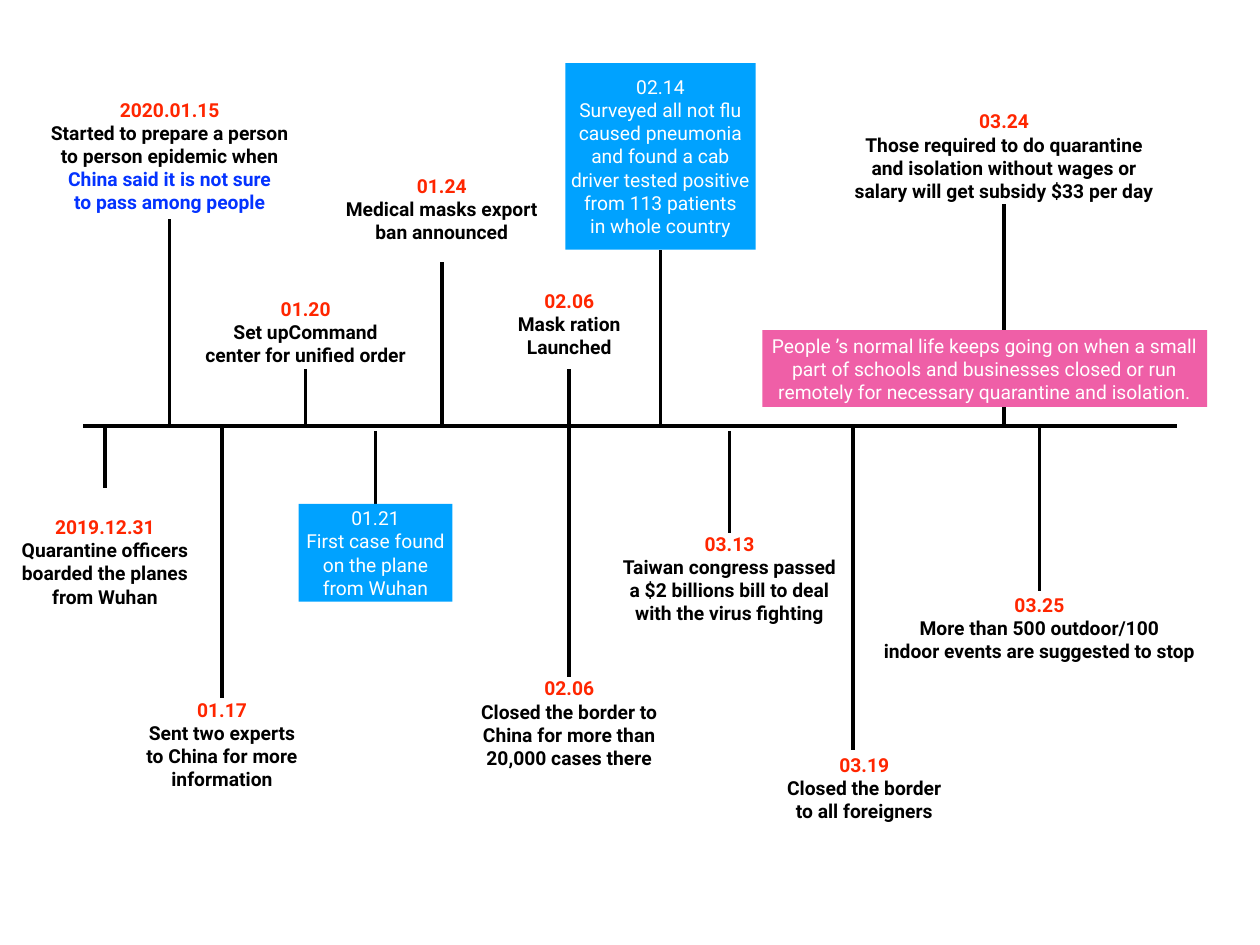
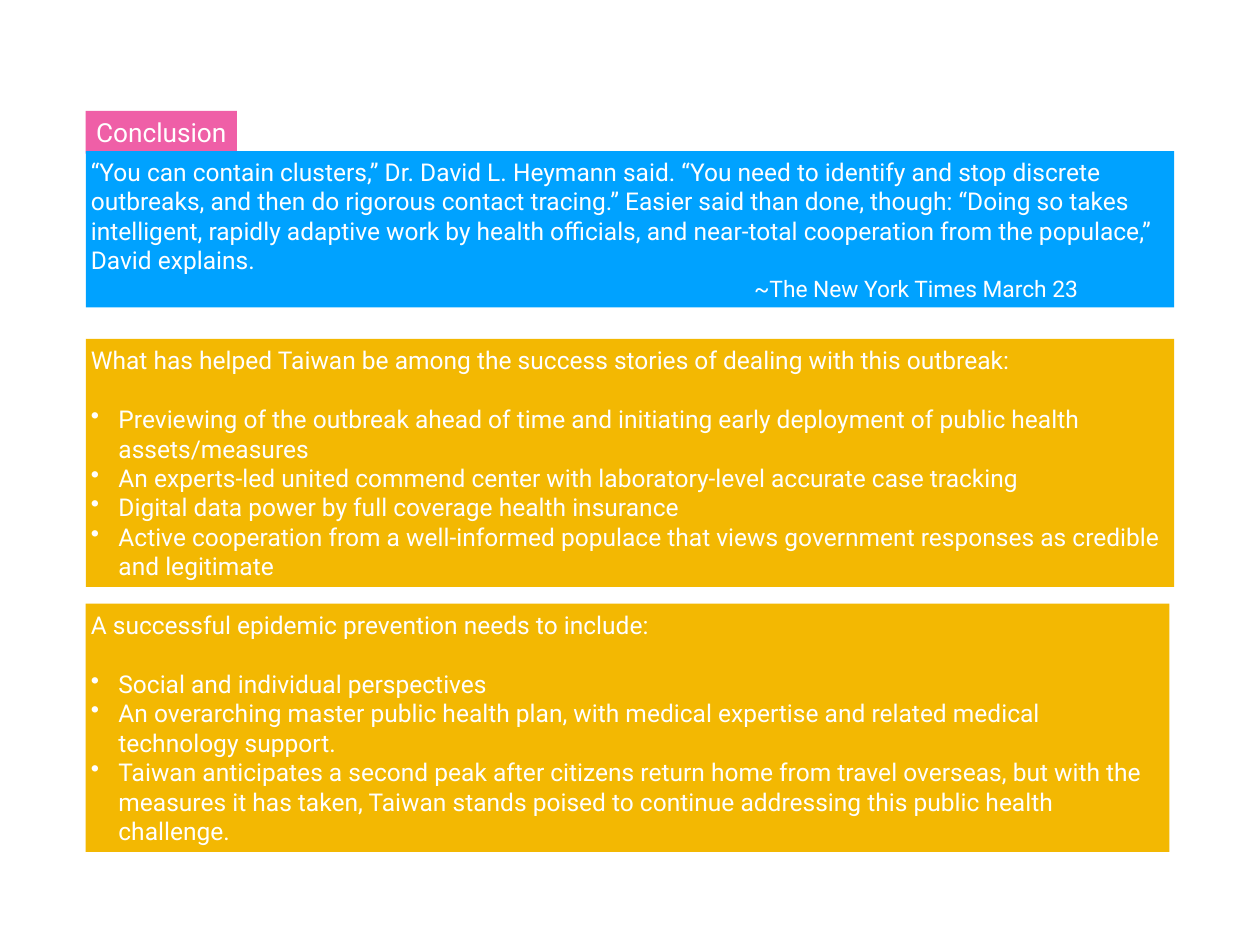
from dataclasses import dataclass

from lxml.etree import SubElement
from pptx import Presentation
from pptx.dml.color import RGBColor
from pptx.enum.shapes import MSO_CONNECTOR as Connector, MSO_SHAPE as Shape
from pptx.enum.text import MSO_ANCHOR as Anchor, PP_ALIGN as Align
from pptx.oxml.ns import qn
from pptx.util import Pt

# Shared style
FONT = "Roboto"
BLACK = RGBColor(0x00, 0x00, 0x00)
WHITE = RGBColor(0xFF, 0xFF, 0xFF)
RED = RGBColor(0xFF, 0x26, 0x00)
DEEP_BLUE = RGBColor(0x04, 0x33, 0xFF)
SKY = RGBColor(0x00, 0xA2, 0xFF)
PINK = RGBColor(0xEF, 0x5F, 0xA7)
AMBER = RGBColor(0xF3, 0xB8, 0x02)
INSET = 2.9

# Timeline geometry, in points
AXIS_Y, AXIS_LEFT, AXIS_RIGHT = 243.4, 47.5, 672.5
GAP_Y = 246.2  # stems that start just below the axis
EVENT_SIZE, EVENT_LINE = 11, 12.6

# Conclusion geometry, in points
PANEL_LEFT, PANEL_WIDTH = 49, 622
PANEL_SIZE, PANEL_LINE = 14, 16.75
BULLET_INDENT, CREDIT_INDENT = 15.8, 379


@dataclass
class Event:
    stem_x: float
    stem_end: float
    top: float
    width: float
    date: str
    lines: list
    fill: RGBColor = None
    stem_start: float = AXIS_Y
    height: float = None
    shift: float = 0
    accent: tuple = ()  # lines set in blue


EVENTS = [
    Event(60, 278.6, 293, 108.7, "2019.12.31",
          ["Quarantine officers boarded the planes from Wuhan"], height=56),
    Event(97, 125.3, 54.7, 147.6, "2020.01.15",
          ["Started to prepare a person", "to person epidemic when",
           "China said it is not sure", "to pass among people"], accent=(2, 3)),
    Event(126.9, 398.9, 397.4, 97.2, "01.17",
          ["Sent two experts", "to China for more", "information"]),
    Event(174.7, 211, 167.8, 122.4, "01.20",
          ["Set upCommand", "center for unified order"]),
    Event(214.6, 289.4, 288, 87.8, "01.21",
          ["First case found", "on the plane", "from Wuhan"],
          fill=SKY, stem_start=GAP_Y),
    Event(252.5, 149.8, 97.9, 120.2, "01.24",
          ["Medical masks export", "ban announced"]),
    Event(325.3, 211, 163.4, 69.1, "02.06", ["Mask ration", "Launched"]),
    Event(325.3, 386.6, 385.2, 113, "02.06",
          ["Closed the border to", "China for more than", "20,000 cases there"]),
    Event(377.4, 142.6, 36, 108.7, "02.14",
          ["Surveyed all not flu", "caused pneumonia", "and found a cab",
           "driver tested positive", "from 113 patients", "in whole country"],
          fill=SKY, height=106.6),
    Event(416.9, 304.6, 302.4, 129.6, "03.13",
          ["Taiwan congress passed", "a $2 billions bill to deal",
           "with the virus fighting"], stem_start=GAP_Y),
    Event(487.4, 428.4, 428.4, 96.5, "03.19",
          ["Closed the border", "to all foreigners"], shift=6.5),
    Event(573.8, 116.6, 61.2, 180.7, "03.24",
          ["Those required to do quarantine", "and isolation without wages or",
           "salary will get subsidy $33 per day"]),
    Event(594, 337.7, 337, 188.6, "03.25",
          ["More than 500 outdoor/100", "indoor events are suggested to stop"]),
]

DAILY_LIFE = [
    "People ’s normal life keeps going on when a small",
    "part of schools and businesses closed or run",
    "remotely for necessary quarantine and isolation.",
]

QUOTE = (
    "“You can contain clusters,” Dr. David L. Heymann said. “You need to identify "
    "and stop discrete outbreaks, and then do rigorous contact tracing.” Easier said "
    "than done, though: “Doing so takes intelligent, rapidly adaptive work by health "
    "officials, and near-total cooperation from the populace,” David explains."
)
CREDIT = "~The New York Times March 23"

SUCCESS_HEADING = ("What has helped Taiwan be among the success stories "
                   "of dealing with this outbreak:")
SUCCESS_POINTS = [
    "Previewing of the outbreak ahead of time and initiating early deployment "
    "of public health assets/measures",
    "An experts-led united commend center with laboratory-level accurate case tracking",
    "Digital data power by full coverage health insurance",
    "Active cooperation from a well-informed populace that views government "
    "responses as credible and legitimate",
]

NEEDS_HEADING = "A successful epidemic prevention needs to include:"
NEEDS_POINTS = [
    "Social and individual perspectives",
    "An overarching master public health plan, with medical expertise and "
    "related medical technology support.",
    "Taiwan anticipates a second peak after citizens return home from travel "
    "overseas, but with the measures it has taken, Taiwan stands poised to "
    "continue addressing this public health challenge.",
]


# Elements
def add_line(page, x1, y1, x2, y2):
    line = page.shapes.add_connector(Connector.STRAIGHT, Pt(x1), Pt(y1), Pt(x2), Pt(y2))
    line.line.color.rgb = BLACK
    line.line.width = Pt(2)
    SubElement(line._element.spPr, qn("a:effectLst"))


def add_box(page, left, top, width, height, fill=None):
    """Add a text box, or a filled rectangle, and return its text frame."""
    place = Pt(left), Pt(top), Pt(width), Pt(height)
    if fill is None:
        box = page.shapes.add_textbox(*place)
    else:
        box = page.shapes.add_shape(Shape.RECTANGLE, *place)
        box.shadow.inherit = False
        box.fill.solid()
        box.fill.fore_color.rgb = fill
        box.line.fill.background()
    frame = box.text_frame
    frame.word_wrap = True
    frame.vertical_anchor = Anchor.MIDDLE
    frame.margin_left = frame.margin_right = Pt(INSET)
    frame.margin_top = frame.margin_bottom = Pt(INSET)
    return frame


def set_indent(para, left, first=0):
    props = para._p.get_or_add_pPr()
    props.set("marL", str(Pt(left)))
    props.set("indent", str(Pt(first)))
    return props


def set_bullet(para):
    props = set_indent(para, BULLET_INDENT, -BULLET_INDENT)
    colour = SubElement(props, qn("a:buClr"))
    SubElement(colour, qn("a:srgbClr")).set("val", str(WHITE))
    SubElement(props, qn("a:buChar")).set("char", "•")


def write(frame, text, size, colour=WHITE, bold=False, align=Align.LEFT, bullet=False):
    """Fill the first, still empty, paragraph or add another one."""
    para = frame.paragraphs[0] if not frame.text else frame.add_paragraph()
    para.add_run().text = text
    para.alignment = align
    if bullet:
        set_bullet(para)
    font = para.font
    font.name, font.size, font.bold = FONT, Pt(size), bold
    font.color.rgb = colour
    return para


def add_event(page, event):
    height = event.height or EVENT_LINE * (len(event.lines) + 1) + 5.5
    left = event.stem_x + event.shift - event.width / 2
    frame = add_box(page, left, event.top, event.width, height, event.fill)
    plain = event.fill is None
    write(frame, event.date, EVENT_SIZE, RED if plain else WHITE, plain, Align.CENTER)
    for number, line in enumerate(event.lines):
        ink = DEEP_BLUE if number in event.accent else BLACK
        write(frame, line, EVENT_SIZE, ink if plain else WHITE, plain, Align.CENTER)


def add_bullet_panel(page, top, width, heading, points):
    frame = add_box(page, PANEL_LEFT, top, width, 141.8, AMBER)
    write(frame, heading, PANEL_SIZE)
    for number, point in enumerate(points):
        para = write(frame, point, PANEL_SIZE, bullet=True)
        if number == 0:
            para.space_before = Pt(PANEL_LINE)


# Slides
def build_timeline(page):
    add_line(page, AXIS_LEFT, AXIS_Y, AXIS_RIGHT, AXIS_Y)
    for event in EVENTS:
        add_line(page, event.stem_x, event.stem_start, event.stem_x, event.stem_end)
    for event in EVENTS:
        add_event(page, event)
    frame = add_box(page, 435.6, 188.6, 254.2, 43.9, PINK)
    for line in DAILY_LIFE:
        write(frame, line, EVENT_SIZE, align=Align.CENTER)


def build_conclusion(page):
    title = add_box(page, PANEL_LEFT, 63.4, 86.4, 24.5, PINK)
    write(title, "Conclusion", 15, align=Align.CENTER)
    quote = add_box(page, PANEL_LEFT, 86.4, PANEL_WIDTH, 89.3, SKY)
    write(quote, QUOTE, PANEL_SIZE)
    set_indent(write(quote, CREDIT, 13), CREDIT_INDENT)
    add_bullet_panel(page, 193.7, PANEL_WIDTH, SUCCESS_HEADING, SUCCESS_POINTS)
    add_bullet_panel(page, 345, 619.2, NEEDS_HEADING, NEEDS_POINTS)


def main():
    deck = Presentation()
    deck.slide_width, deck.slide_height = Pt(720), Pt(540)
    blank = deck.slide_layouts[6]
    for build in (build_timeline, build_conclusion):
        build(deck.slides.add_slide(blank))
    deck.save("out.pptx")


if __name__ == "__main__":
    main()
